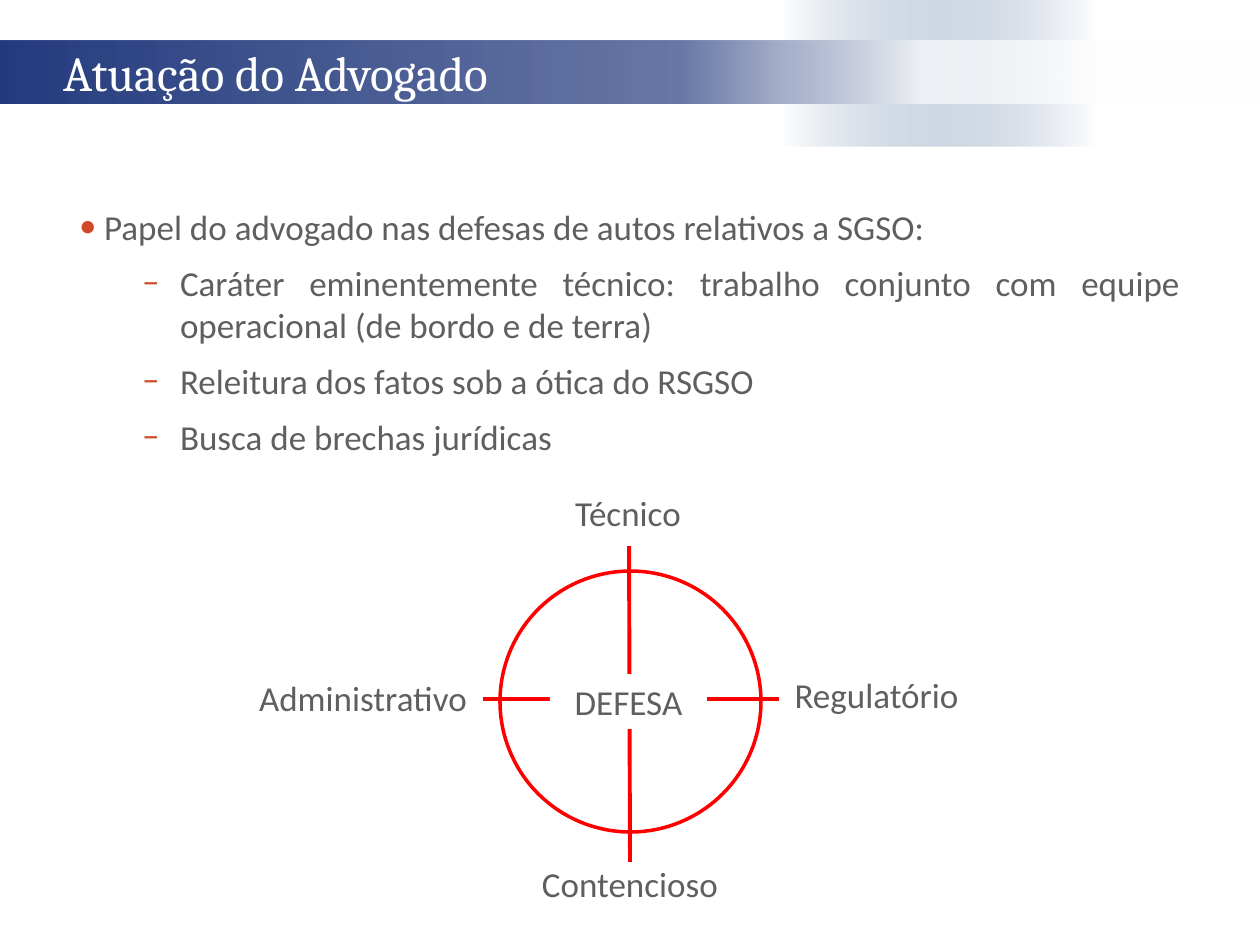
"""Build the slide on the lawyer's role, with a crosshair diagram."""
from dataclasses import dataclass

from lxml import etree
from pptx import Presentation
from pptx import util as u
from pptx.dml.color import RGBColor
from pptx.enum import shapes, text
from pptx.oxml import ns

EMU_PER_PX = 914400 / 126
WHITE = RGBColor(0xFF, 0xFF, 0xFF)
GREY = RGBColor(0x5F, 0x5F, 0x5F)
RED = RGBColor(0xFF, 0x00, 0x00)
ORANGE = RGBColor(0xD2, 0x49, 0x2A)
NAVY = RGBColor(0x01, 0x1C, 0x69)
STEEL = RGBColor(0x1F, 0x49, 0x7D)


@dataclass(frozen=True)
class Frame:
    left: int
    top: int
    width: int
    height: int

    def emu(self) -> tuple:
        return px(self.left), px(self.top), px(self.width), px(self.height)


@dataclass(frozen=True)
class Stop:
    percent: int
    color: RGBColor
    alpha: int


@dataclass(frozen=True)
class Level:
    bullet: str
    margin: int
    hanging: int


@dataclass(frozen=True)
class Label:
    words: str
    frame: Frame
    anchor: text.MSO_ANCHOR = text.MSO_ANCHOR.TOP


BANDS = (
    (Frame(0, 0, 1260, 147), (Stop(13, WHITE, 85), Stop(38, STEEL, 0), Stop(100, NAVY, 0))),
    (Frame(0, 41, 1260, 63), (Stop(27, WHITE, 63), Stop(46, NAVY, 59), Stop(100, NAVY, 86))),
)
LEVELS = (Level("•", 25, 25), Level("–", 101, 38))
ITEMS = (
    (0, "Papel do advogado nas defesas de autos relativos a SGSO:"),
    (1, "Caráter eminentemente técnico: trabalho conjunto com equipe "
        "operacional (de bordo e de terra)"),
    (1, "Releitura dos fatos sob a ótica do RSGSO"),
    (1, "Busca de brechas jurídicas"),
)
BOTTOM_LABEL = Label("Contencioso", Frame(510, 862, 240, 55))
LABELS = (
    Label("Técnico", Frame(508, 491, 240, 55)),
    Label("Administrativo", Frame(243, 677, 240, 55)),
    Label("Regulatório", Frame(779, 673, 195, 55)),
    BOTTOM_LABEL,
    Label("DEFESA", Frame(550, 674, 157, 55), text.MSO_ANCHOR.MIDDLE),
)


def px(length: int) -> u.Emu:
    return u.Emu(round(length * EMU_PER_PX))


def add_child(parent, tag: str, **attributes: str):
    return etree.SubElement(parent, ns.qn(tag), attributes)


def add_plain(page, kind, frame: Frame):
    shape = page.shapes.add_shape(kind, *frame.emu())
    shape.shadow.inherit = False
    shape.line.fill.background()
    return shape


def add_band(page, frame: Frame, stops: tuple) -> None:
    band = add_plain(page, shapes.MSO_SHAPE.RECTANGLE, frame)
    band.fill.gradient()
    band.fill.gradient_angle = 180
    stop_list = next(band.element.iter(ns.qn("a:gsLst")))
    for old in list(stop_list):
        stop_list.remove(old)
    for stop in stops:
        item = add_child(stop_list, "a:gs", pos=str(stop.percent * 1000))
        color = add_child(item, "a:srgbClr", val=str(stop.color))
        add_child(color, "a:alpha", val=str(stop.alpha * 1000))
    page.shapes.title.element.addprevious(band.element)


def prepare(box, anchor: text.MSO_ANCHOR):
    frame = box.text_frame
    frame.margin_left = frame.margin_top = frame.margin_right = frame.margin_bottom = 0
    frame.word_wrap = True
    frame.auto_size = text.MSO_AUTO_SIZE.NONE
    frame.vertical_anchor = anchor
    return frame


def place(box, frame: Frame) -> None:
    box.left, box.top, box.width, box.height = frame.emu()


def add_span(para, words: str, face: str, size: int, color: RGBColor, align) -> None:
    para.alignment = align
    span = para.add_run()
    span.text = words
    span.font.name = face
    span.font.size = u.Pt(size)
    span.font.color.rgb = color


def set_bullet(para, level: Level) -> None:
    props = para._p.get_or_add_pPr()
    props.set("marL", str(px(level.margin)))
    props.set("indent", str(-px(level.hanging)))
    add_child(add_child(props, "a:buClr"), "a:srgbClr", val=str(ORANGE))
    add_child(props, "a:buFont", typeface="Calibri")
    add_child(props, "a:buChar", char=level.bullet)


def fill_title(box) -> None:
    place(box, Frame(63, 34, 934, 76))
    para = prepare(box, text.MSO_ANCHOR.MIDDLE).paragraphs[0]
    add_span(para, "Atuação do Advogado", "Cambria", 28, WHITE, text.PP_ALIGN.LEFT)


def fill_body(box) -> None:
    place(box, Frame(79, 205, 1101, 218))
    frame = prepare(box, text.MSO_ANCHOR.TOP)
    for index, (depth, words) in enumerate(ITEMS):
        para = frame.add_paragraph() if index else frame.paragraphs[0]
        para.level = depth
        set_bullet(para, LEVELS[depth])
        para.space_before = u.Pt(0)
        para.space_after = u.Pt(8)
        add_span(para, words, "Calibri", 20, GREY, text.PP_ALIGN.JUSTIFY)


def add_circle(page, frame: Frame) -> None:
    circle = add_plain(page, shapes.MSO_SHAPE.OVAL, frame)
    circle.fill.solid()
    circle.fill.fore_color.rgb = WHITE
    circle.line.color.rgb = RED
    circle.line.width = u.Pt(2)


def add_line(page, start: tuple, end: tuple):
    line = page.shapes.add_connector(
        shapes.MSO_CONNECTOR.STRAIGHT, *map(px, start), *map(px, end))
    line.line.color.rgb = RED
    line.line.width = u.Pt(2.25)
    add_child(line.element.spPr, "a:effectLst")
    return line


def add_label(page, label: Label):
    box = add_plain(page, shapes.MSO_SHAPE.RECTANGLE, label.frame)
    box.fill.solid()
    box.fill.fore_color.rgb = WHITE
    para = prepare(box, label.anchor).paragraphs[0]
    add_span(para, label.words, "Calibri", 20, GREY, text.PP_ALIGN.CENTER)
    return box


def main() -> None:
    deck = Presentation()
    deck.slide_width, deck.slide_height = px(1260), px(945)
    page = deck.slides.add_slide(deck.slide_layouts[1])
    for frame, stops in BANDS:
        add_band(page, frame, stops)
    fill_title(page.shapes.title)
    fill_body(page.placeholders[1])
    add_circle(page, Frame(500, 571, 261, 261))
    upright = add_line(page, (630, 862), (629, 518))
    add_line(page, (481, 699), (820, 699))
    boxes = {label: add_label(page, label) for label in LABELS}
    upright.begin_connect(boxes[BOTTOM_LABEL], 0)
    deck.save("out.pptx")


if __name__ == "__main__":
    main()
